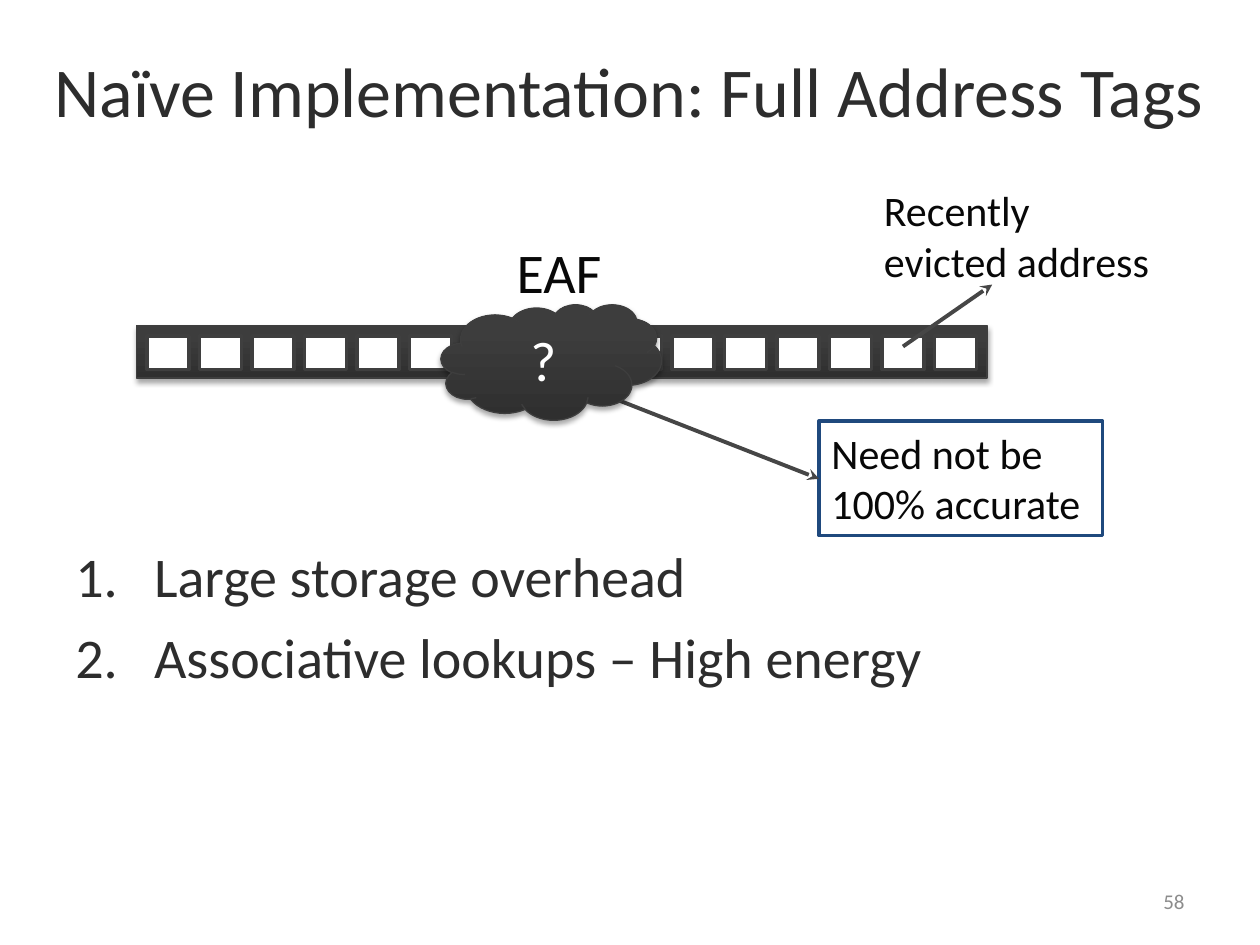
import pptx
import pptx.dml.color
import pptx.enum.shapes
import pptx.enum.text
import pptx.oxml
import pptx.oxml.ns
import pptx.util

SHAPE = pptx.enum.shapes.MSO_SHAPE
ALIGN = pptx.enum.text.PP_ALIGN
ANCHOR = pptx.enum.text.MSO_ANCHOR
AUTO_SIZE = pptx.enum.text.MSO_AUTO_SIZE

COLORS = {
    "title": "2D2D2D", "label": "080808", "white": "FFFFFF", "number": "8C8C8C",
    "dark_low": "2F2F2F", "dark_high": "3D3D3D", "dark_edge": "3E3E3E",
    "cell_edge": "3F3F3F", "arrow": "464646", "note_edge": "1F497D",
}


class SlideBuilder:
    """Draws styled elements on a slide, placed on a grid of 24 columns and 18 rows."""

    font = "Calibri"
    columns, rows = 24, 18

    def __init__(self, presentation):
        self.column = presentation.slide_width / self.columns
        self.row = presentation.slide_height / self.rows
        self.slide = presentation.slides.add_slide(presentation.slide_layouts[5])

    def place(self, left, top, width, height):
        return [round(length * unit) for length, unit in
                zip((left, top, width, height), (self.column, self.row) * 2)]

    def color(self, name):
        return pptx.dml.color.RGBColor.from_string(COLORS[name])

    def apply(self, target, values):
        for name, value in values.items():
            setattr(target, name, value)

    def set_text(self, shape, text, size, color, align=ALIGN.LEFT, **frame_values):
        frame = shape.text_frame
        self.apply(frame, {"text": text, "word_wrap": True, "auto_size": AUTO_SIZE.NONE,
                           "vertical_anchor": ANCHOR.TOP, **frame_values})
        paragraph = frame.paragraphs[0]
        paragraph.alignment = align
        font = paragraph.runs[0].font
        self.apply(font, {"name": self.font, "size": pptx.util.Pt(size)})
        font.color.rgb = self.color(color)
        return paragraph

    def title(self, box, text):
        shape = self.slide.shapes.title
        self.apply(shape, dict(zip(("left", "top", "width", "height"), self.place(*box))))
        self.set_text(shape, text, 40, "title", vertical_anchor=ANCHOR.MIDDLE)

    def label(self, box, text, size, color, align=ALIGN.LEFT, **frame_values):
        shape = self.slide.shapes.add_textbox(*self.place(*box))
        return self.set_text(shape, text, size, color, align, **frame_values)

    def numbered(self, box, number, text):
        paragraph = self.label(box, f"{number}.\t{text}", 32, "title", word_wrap=False)
        paragraph._p.get_or_add_pPr().append(pptx.oxml.parse_xml(
            f'<a:tabLst {pptx.oxml.ns.nsdecls("a")}>'
            f'<a:tab pos="{round(1.5 * self.column)}" algn="l"/></a:tabLst>'))

    def block(self, kind, box, edge, weight):
        shape = self.slide.shapes.add_shape(kind, *self.place(*box))
        shape.shadow.inherit = False
        shape.fill.solid()
        shape.fill.fore_color.rgb = self.color("white")
        shape.line.color.rgb = self.color(edge)
        shape.line.width = pptx.util.Pt(weight)
        return shape

    def dark_block(self, kind, box):
        shape = self.block(kind, box, "dark_edge", 0.75)
        shape.fill.gradient()
        shape.fill.gradient_angle = 90
        stops = zip(shape.fill.gradient_stops, ("dark_low", "dark_high"), (0, 0.8))
        for stop, color, position in stops:
            stop.color.rgb = self.color(color)
            stop.position = position
        effects = shape._element.spPr.find(pptx.oxml.ns.qn("a:effectLst"))
        effects.append(pptx.oxml.parse_xml(
            f'<a:outerShdw {pptx.oxml.ns.nsdecls("a")} blurRad="{pptx.util.Pt(3.1)}" '
            f'dist="{pptx.util.Pt(1.8)}" dir="5400000" rotWithShape="0">'
            '<a:srgbClr val="000000"><a:alpha val="35000"/></a:srgbClr></a:outerShdw>'))
        return shape

    def arrow(self, start, end):
        connector = self.slide.shapes.add_connector(
            pptx.enum.shapes.MSO_CONNECTOR.STRAIGHT, *self.place(*start, *end))
        connector.line.color.rgb = self.color("arrow")
        connector.line.width = pptx.util.Pt(2.25)
        namespace = pptx.oxml.ns.nsdecls("a")
        connector.line._get_or_add_ln().append(
            pptx.oxml.parse_xml(f'<a:tailEnd {namespace} type="stealth"/>'))
        connector._element.spPr.append(pptx.oxml.parse_xml(f"<a:effectLst {namespace}/>"))


def main():
    presentation = pptx.Presentation()
    presentation.slide_width = pptx.util.Inches(10)
    presentation.slide_height = pptx.util.Inches(7.5)
    builder = SlideBuilder(presentation)

    builder.title((0.8, 0.2, 22.8, 3), "Naïve Implementation: Full Address Tags")
    builder.label((9.6, 4.4, 2.1, 1.54), "EAF", 32, "label", ALIGN.CENTER, word_wrap=False)
    problems = ((12.24, "Large storage overhead"),
                (17.04, "Associative lookups – High energy"))
    for index, (width, text) in enumerate(problems):
        builder.numbered((1.2, 10.2 + 1.54 * index, width, 1.54), index + 1, text)
    builder.label((16.6, 3.4, 5.6, 2.18), "Recently evicted address", 24, "label")

    builder.dark_block(SHAPE.RECTANGLE, (2.6, 6.2, 16.2, 1))
    for index in range(16):
        builder.block(SHAPE.RECTANGLE, (2.8 + index, 6.4, 0.8, 0.64), "cell_edge", 2)
    builder.arrow((17.2, 6.6), (18.9, 5.42))

    note = builder.block(SHAPE.RECTANGLE, (15.6, 8.02, 5.4, 2.18), "note_edge", 2)
    builder.set_text(note, "Need not be 100% accurate", 24, "label")
    builder.arrow((10.7, 7.2), (15.6, 9.12))
    cloud = builder.dark_block(SHAPE.CLOUD, (8.4, 5.8, 4.2, 2.2))
    builder.set_text(cloud, "?", 32, "white", ALIGN.CENTER, vertical_anchor=ANCHOR.MIDDLE)

    builder.label((17.2, 16.68, 5.6, 0.96), "58", 12, "number", ALIGN.RIGHT,
                  vertical_anchor=ANCHOR.MIDDLE)
    presentation.save("out.pptx")


if __name__ == "__main__":
    main()
